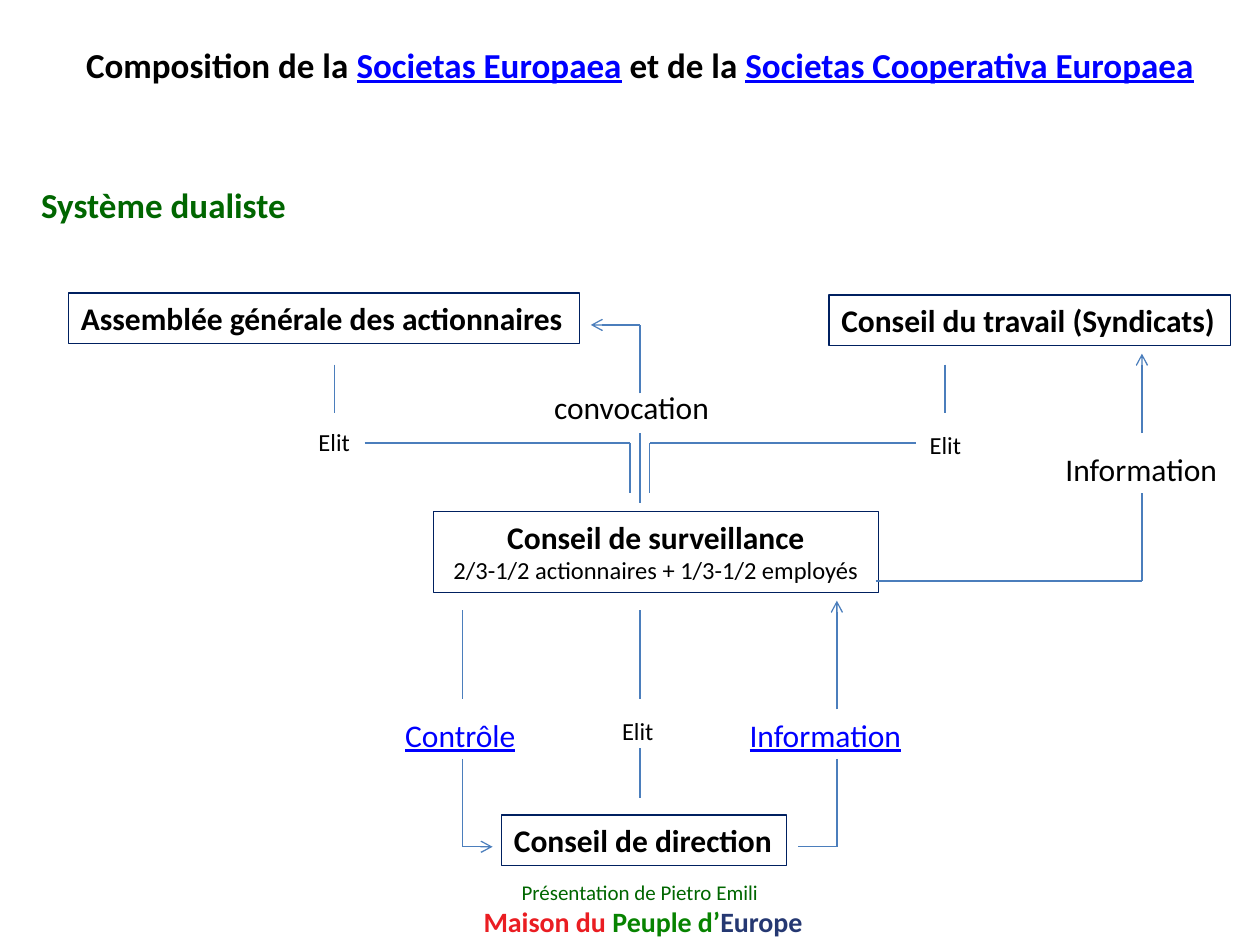
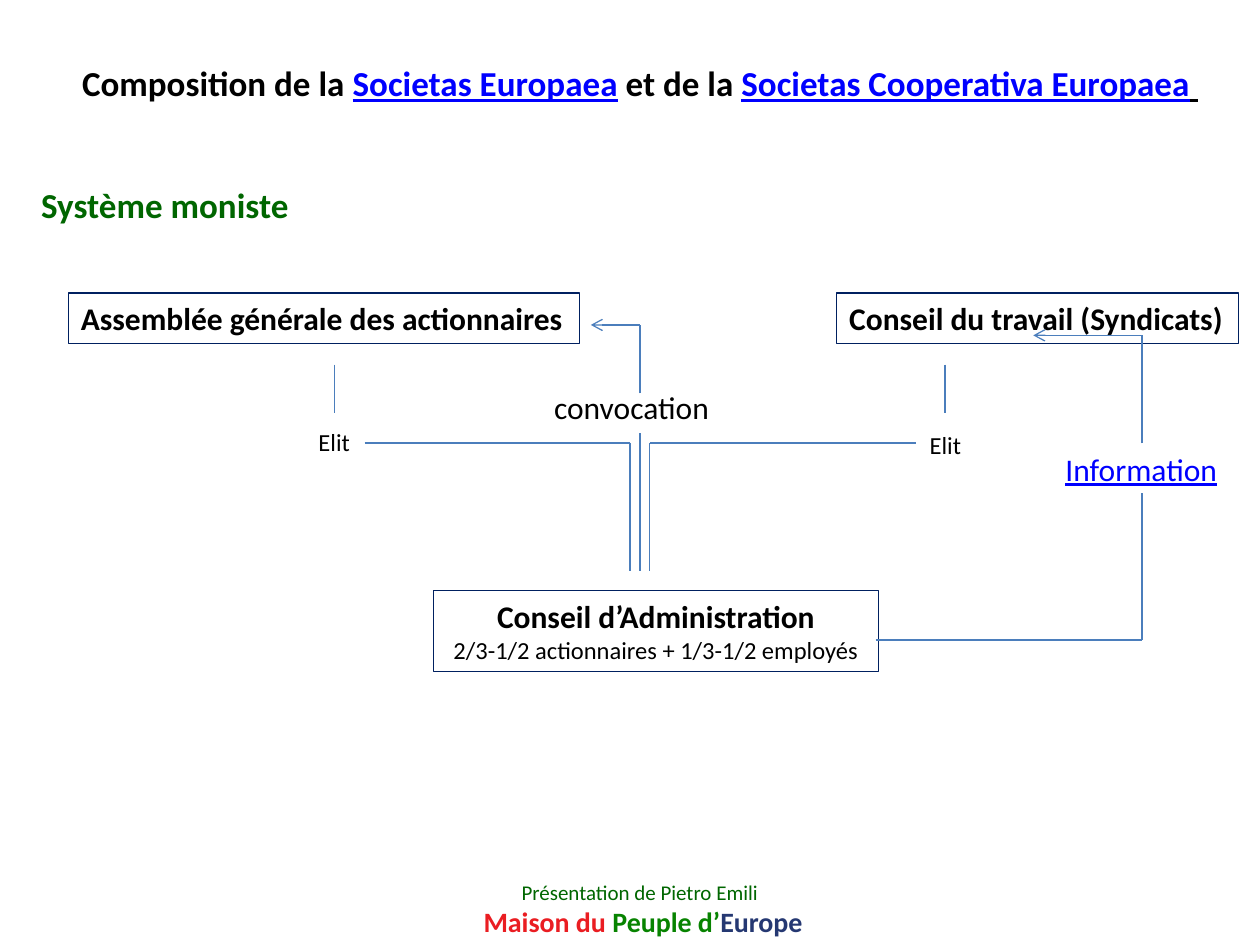
from dataclasses import dataclass

from lxml import etree
from pptx import Presentation
from pptx.dml.color import RGBColor
from pptx.enum import shapes as sh, text as tx
from pptx.oxml import ns
from pptx.util import Cm, Pt


@dataclass(frozen=True)
class Theme:
    font: str = "Calibri"
    black: str = "000000"
    link: str = "0000FF"
    green: str = "006600"
    red: str = "EA1D22"
    leaf: str = "078300"
    navy: str = "253872"
    frame: str = "002060"
    line: str = "4B7EBC"
    head: int = 20
    name: int = 18
    brand: int = 16
    small: int = 14
    note: int = 12
    width: float = 0.75


T = Theme()


def run(text, size=T.name, color=T.black, bold=False, under=False):
    return text, size, color, bold, under


# Content: a text is a list of paragraphs, a paragraph a list of runs.
# Places are in centimetres.
FOOTER = [[run("Présentation de Pietro Emili", T.note, T.green), "\n",
           run(" Maison du ", T.brand, T.red, True),
           run("Peuple d’", T.brand, T.leaf, True),
           run("Europe", T.brand, T.navy, True)]]
TITLE = [run("Composition de la ", T.head, T.black, True),
         run("Societas Europaea", T.head, T.link, True, True),
         run(" et de la ", T.head, T.black, True),
         run("Societas Cooperativa Europaea", T.head, T.link, True, True)]
SHARE = "2/3-1/2 actionnaires + 1/3-1/2 employés"
ELIT = run("Elit", T.small)
INFO = run("Information", color=T.link, under=True)

MID, GAP = 12.9, 0.2       # central axis, offset of the lines beside it
LEFT, RIGHT = 6.75, 19.05  # axes of the two assemblies
SIDE = 23.02               # axis of the information line
BAR = 8.93                 # height of the election lines
CTRL, BACK = 9.32, 16.87   # axes of control and feedback
FOOT = 17.07               # height of the lines to the management

LABELS = [(6.17, 8.48, 1.17, 0.86, ELIT),
          (18.49, 8.54, 1.17, 0.86, ELIT),
          (10.92, 7.7, 3.68, 1.02, run("convocation"))]
ARROWS = [[(MID, 7.93), (MID, 6.55), (11.91, 6.55)]]

SLIDES = [
    dict(
        title=TITLE, top=0.74, system="Système dualiste",
        council=(16.71, 5.95), board="Conseil de surveillance", y=10.31,
        boxes=[(10.11, 16.43, 5.74, 1.02, "Conseil de direction")],
        labels=[(12.29, 14.3, 1.17, 0.86, ELIT),
                (7.92, 14.3, 2.77, 1.02,
                 run("Contrôle", color=T.link, under=True)),
                (14.86, 14.3, 3.61, 1.02, INFO),
                (21.23, 8.94, 3.61, 1.02, run("Information"))],
        ends=(9.93, 10.13), turn=11.71,
        lines=[[(MID, 12.3), (MID, 14.1)],
               [(MID, 15.08), (MID, 16.08)],
               [(CTRL, 12.3), (CTRL, 14.1)],
               [(BACK, 15.3), (BACK, FOOT), (16.08, FOOT)]],
        arrows=[[(CTRL, 15.3), (CTRL, FOOT), (9.93, FOOT)],
                [(BACK, 14.3), (BACK, 12.11)],
                [(SIDE, 8.73), (SIDE, 7.13)]]),
    dict(
        title=TITLE + [run(" ", T.head, T.black, True, True)],
        top=1.12, system="Système moniste",
        council=(16.87, 5.91), board="Conseil d’Administration", y=11.91,
        boxes=[], labels=[(21.23, 8.94, 3.61, 1.02, INFO)],
        ends=(11.51, 11.51), turn=12.9, lines=[],
        arrows=[[(SIDE, 8.94), (SIDE, 6.76), (20.83, 6.76)]]),
]


def write(shape, paras, align=tx.PP_ALIGN.LEFT, wrap=False):
    frame = shape.text_frame
    frame.word_wrap = wrap
    frame.auto_size = tx.MSO_AUTO_SIZE.NONE
    frame.vertical_anchor = tx.MSO_ANCHOR.TOP
    for i, runs in enumerate(paras):
        para = frame.add_paragraph() if i else frame.paragraphs[0]
        para.alignment = align
        for item in runs:
            if item == "\n":
                para.add_line_break()
                continue
            part = para.add_run()
            part.text, size, color, bold, under = item
            font = part.font
            font.name, font.size = T.font, Pt(size)
            font.bold, font.underline = bold, under
            font.color.rgb = RGBColor.from_string(color)


def label(slide, x, y, w, h, paras, align=tx.PP_ALIGN.LEFT):
    box = slide.shapes.add_textbox(Cm(x), Cm(y), Cm(w), Cm(h))
    write(box, paras, align)
    return box


def organ(slide, x, y, w, h, name, detail=None):
    """Draw a framed body of the company, with an optional second line."""
    box = slide.shapes.add_shape(sh.MSO_SHAPE.RECTANGLE,
                                 Cm(x), Cm(y), Cm(w), Cm(h))
    box.shadow.inherit = False
    box.fill.background()
    box.line.color.rgb = RGBColor.from_string(T.frame)
    box.line.width = Pt(T.width)
    paras = [[run(name, bold=True)]]
    if detail:
        paras.append([run(detail, T.small)])
    write(box, paras, tx.PP_ALIGN.CENTER if detail else tx.PP_ALIGN.LEFT)


def route(slide, points, arrow=False):
    """Join the points by straight lines, with an arrowhead at the last."""
    for start, end in zip(points, points[1:]):
        link = slide.shapes.add_connector(
            sh.MSO_CONNECTOR.STRAIGHT, *map(Cm, start + end))
        link.line.color.rgb = RGBColor.from_string(T.line)
        link.line.width = Pt(T.width)
        props = link.element.spPr
        etree.SubElement(props, ns.qn("a:effectLst"))
        if arrow and end == points[-1]:
            etree.SubElement(props.find(ns.qn("a:ln")), ns.qn("a:tailEnd"),
                             type="arrow")


def build(slide, data):
    title = slide.shapes.title
    title.left, title.top = Cm(0.2), Cm(data["top"])
    title.width, title.height = Cm(25.4), Cm(1.11)
    write(title, [data["title"]], tx.PP_ALIGN.CENTER, True)
    label(slide, 0.58, 3.58, 5.5, 1.11,
          [[run(data["system"], T.head, T.green, True)]])

    organ(slide, 1.38, 5.91, 10.3, 1.02,
          "Assemblée générale des actionnaires")
    organ(slide, *data["council"], 8.1, 1.02, "Conseil du travail (Syndicats)")
    organ(slide, 8.74, data["y"], 8.97, 1.63, data["board"], SHARE)
    for box in data["boxes"]:
        organ(slide, *box)
    for *place, item in LABELS + data["labels"]:
        label(slide, *place, [[item]])

    side, mid = data["ends"]
    turn = data["turn"]
    lines = [[(axis, 7.35), (axis, 8.33)] for axis in (LEFT, RIGHT)]
    lines += [[(x, BAR), (MID + off, BAR), (MID + off, side)]
              for x, off in ((7.35, -GAP), (18.46, GAP))]
    lines += [[(MID, 8.73), (MID, mid)],
              [(17.65, turn), (SIDE, turn), (SIDE, 9.93)]]
    for points in lines + data["lines"]:
        route(slide, points)
    for points in ARROWS + data["arrows"]:
        route(slide, points, True)


def main():
    prs = Presentation()
    prs.slide_width, prs.slide_height = Cm(25.4), Cm(19.05)
    layout = prs.slide_layouts[5]
    for i, data in enumerate(SLIDES):
        slide = prs.slides.add_slide(layout)
        if i == 0:  # the footer moves to the layout, which all slides share
            foot = label(slide, 9.32, 17.6, 7.16, 1.45, FOOTER,
                         tx.PP_ALIGN.CENTER)
            layout.shapes.element.append(foot.element)
        build(slide, data)
    prs.save("out.pptx")


if __name__ == "__main__":
    main()
